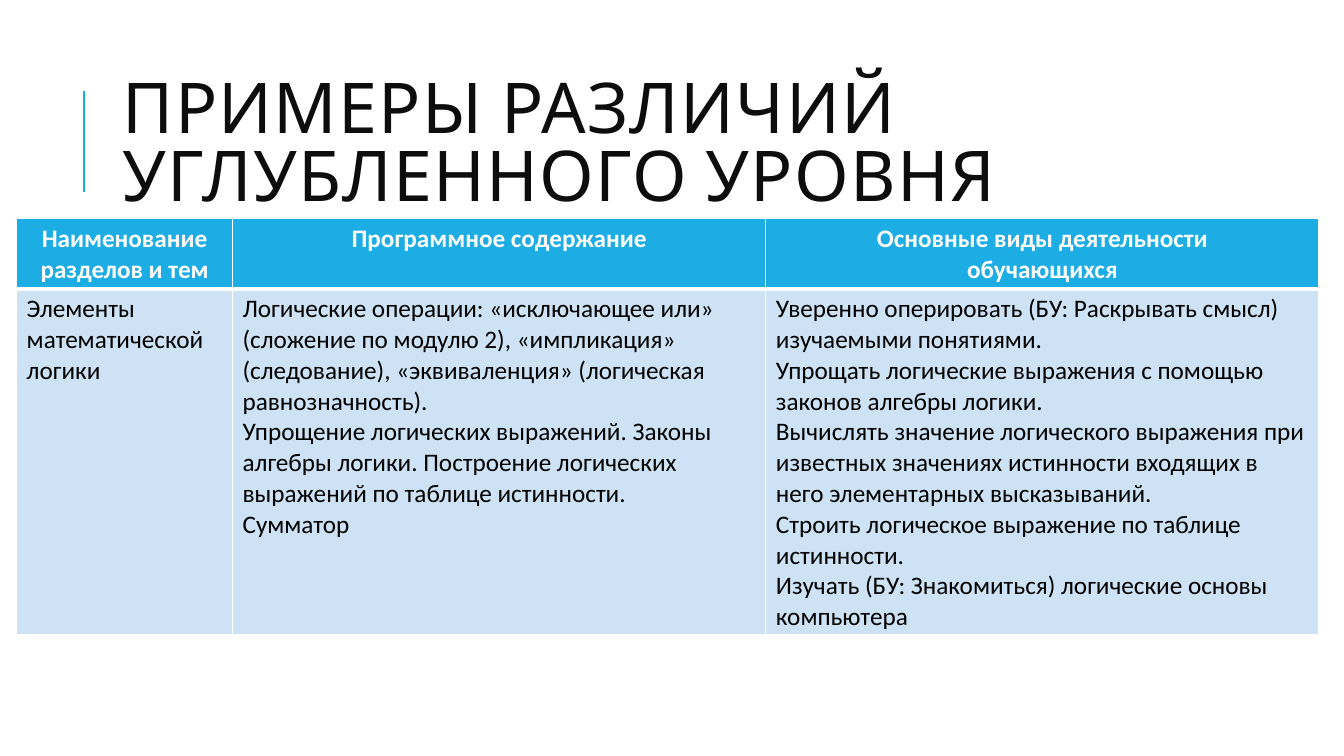
from dataclasses import dataclass

from lxml import etree
from pptx import Presentation
from pptx import util as u
from pptx.dml.color import RGBColor
from pptx.enum import shapes, text
from pptx.oxml import ns

ACCENT, PALE, WHITE, BLACK, TITLE = "1CADE4", "CDE3F5", "FFFFFF", "000000", "0D0D0D"


@dataclass
class RowStyle:
    height: float
    fill: str
    color: str
    bold: bool
    align: text.PP_ALIGN
    borders: dict[str, float]


@dataclass
class Column:
    width: float
    header: list[str]
    body: list[str]


HEADER = RowStyle(1.78, ACCENT, WHITE, True, text.PP_ALIGN.CENTER,
                  {"L": 1, "R": 1, "T": 1, "B": 3})
BODY = RowStyle(8.7, PALE, BLACK, False, text.PP_ALIGN.LEFT,
                {"L": 1, "R": 1, "T": 3, "B": 1})

COLUMNS = [
    Column(5.44, ["Наименование", "разделов и тем"],
           ["Элементы математической логики"]),
    Column(13.44, ["Программное содержание"], [
        "Логические операции: «исключающее или» (сложение по модулю 2), "
        "«импликация» (следование), «эквиваленция» (логическая равнозначность).",
        "Упрощение логических выражений. Законы алгебры логики. "
        "Построение логических выражений по таблице истинности.",
        "Сумматор",
    ]),
    Column(13.94, ["Основные виды деятельности", "обучающихся"], [
        "Уверенно оперировать (БУ: Раскрывать смысл) изучаемыми понятиями.",
        "Упрощать логические выражения с помощью законов алгебры логики.",
        "Вычислять значение логического выражения при известных значениях "
        "истинности входящих в него элементарных высказываний.",
        "Строить логическое выражение по таблице истинности.",
        "Изучать (БУ: Знакомиться) логические основы компьютера",
    ]),
]


def rgb(value: str) -> RGBColor:
    return RGBColor.from_string(value)


def add_run(p, content: str, font: str, size: float, color: str, bold: bool = False):
    r = p.add_run()
    r.text = content
    r.font.name = font
    r.font.size = u.Pt(size)
    r.font.bold = bold
    r.font.color.rgb = rgb(color)
    return r


def add_title(s, content: str) -> None:
    sp = s.shapes.add_textbox(u.Cm(2.84), u.Cm(1.63), u.Cm(27), u.Cm(4.17))
    tf = sp.text_frame
    tf.word_wrap = True
    tf.vertical_anchor = text.MSO_ANCHOR.MIDDLE
    p = tf.paragraphs[0]
    p.line_spacing = 0.8
    r = add_run(p, content, "Cabin", 50, TITLE)
    r._r.get_or_add_rPr().set("spc", "100")


def add_accent_line(s) -> None:
    line = s.shapes.add_connector(shapes.MSO_CONNECTOR.STRAIGHT,
                                  u.Cm(2.11), u.Cm(4.83), u.Cm(2.11), u.Cm(2.29))
    line.line.color.rgb = rgb(ACCENT)
    line.line.width = u.Pt(1.5)
    etree.SubElement(line._element.spPr, ns.qn("a:effectLst"))


def set_borders(cell, borders: dict[str, float]) -> None:
    tc_pr = cell._tc.get_or_add_tcPr()
    for i, (side, width) in enumerate(borders.items()):
        ln = etree.Element(ns.qn(f"a:ln{side}"), w=str(u.Pt(width)))
        fill = etree.SubElement(ln, ns.qn("a:solidFill"))
        etree.SubElement(fill, ns.qn("a:srgbClr"), val=WHITE)
        tc_pr.insert(i, ln)


def fill_cell(cell, lines: list[str], style: RowStyle) -> None:
    cell.fill.solid()
    cell.fill.fore_color.rgb = rgb(style.fill)
    set_borders(cell, style.borders)
    tf = cell.text_frame
    for i, line in enumerate(lines):
        p = tf.add_paragraph() if i else tf.paragraphs[0]
        p.alignment = style.align
        add_run(p, line, "Calibri", 18, style.color, style.bold)


def add_topics_table(s, columns: list[Column]) -> None:
    width = sum(c.width for c in columns)
    table = s.shapes.add_table(2, len(columns), u.Cm(0.42), u.Cm(5.5), u.Cm(width),
                               u.Cm(HEADER.height + BODY.height)).table
    for row, style in zip(table.rows, (HEADER, BODY)):
        row.height = u.Cm(style.height)
    for i, column in enumerate(columns):
        table.columns[i].width = u.Cm(column.width)
        fill_cell(table.cell(0, i), column.header, HEADER)
        fill_cell(table.cell(1, i), column.body, BODY)


def main() -> None:
    prs = Presentation()
    prs.slide_width, prs.slide_height = u.Cm(33.87), u.Cm(19.05)
    s = prs.slides.add_slide(prs.slide_layouts[6])
    add_accent_line(s)
    add_title(s, "ПРИМЕРЫ РАЗЛИЧИЙ УГЛУБЛЕННОГО УРОВНЯ")
    add_topics_table(s, COLUMNS)
    prs.save("out.pptx")


if __name__ == "__main__":
    main()
